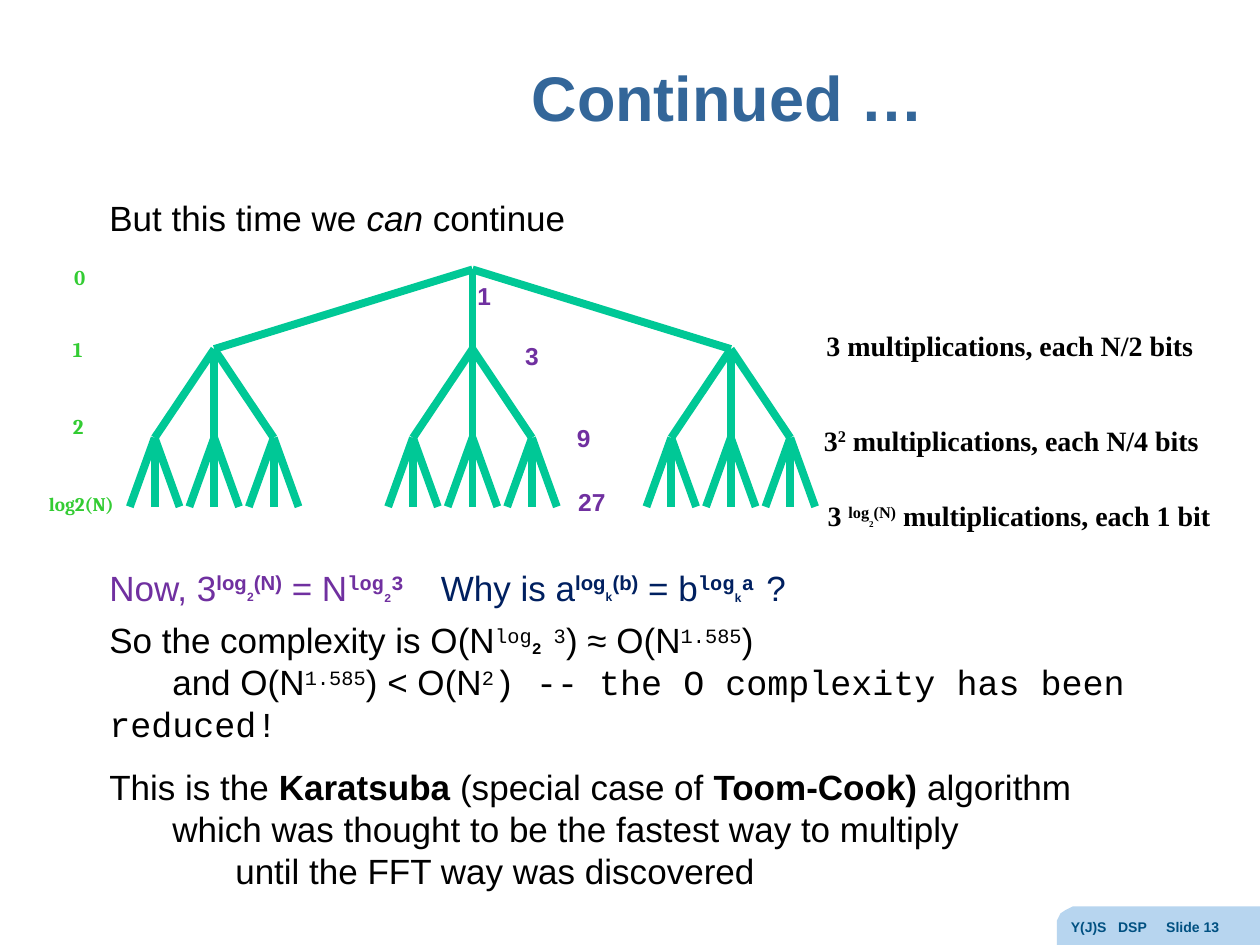
"""Build the slide on the recursion tree and complexity of Karatsuba multiplication."""
from lxml import etree
from pptx import Presentation
from pptx.dml.color import RGBColor
from pptx.enum.shapes import MSO_CONNECTOR
from pptx.enum.text import MSO_ANCHOR, PP_ALIGN
from pptx.oxml.ns import qn
from pptx.util import Pt

STRAIGHT = MSO_CONNECTOR.STRAIGHT
TOP, MIDDLE = MSO_ANCHOR.TOP, MSO_ANCHOR.MIDDLE
LEFT, CENTER = PP_ALIGN.LEFT, PP_ALIGN.CENTER

BLACK = RGBColor(0, 0, 0)
BLUE = RGBColor(0x33, 0x66, 0x99)
NAVY = RGBColor(0x00, 0x20, 0x60)
PURPLE = RGBColor(0x70, 0x30, 0xA0)
GREEN = RGBColor(0x33, 0xCC, 0x33)
TEAL = RGBColor(0x00, 0xC8, 0x96)
PALE_BLUE = RGBColor(0xB7, 0xD5, 0xEF)
FOOTER_BLUE = RGBColor(0x00, 0x50, 0x81)

SANS, MONO, SERIF, LABEL = "Arial", "Courier New", "Times New Roman", "Cambria"

PLAIN = {}
BOLD = {"bold": True}
ITALIC = {"italic": True}
CODE = {"name": MONO}
RAISED = {"baseline": 30}
RAISED_BOLD = {"baseline": 30, "bold": True}
RAISED_CODE = {"baseline": 30, "name": MONO}
RAISED_CODE_BOLD = {**RAISED_CODE, "bold": True}
LOW_BOLD = {"baseline": -2, "bold": True, "size": Pt(12)}
LOW_CODE_BOLD = {"baseline": -4, "bold": True, "size": Pt(12), "name": MONO}
LOW_CODE_LARGE = {**LOW_CODE_BOLD, "size": Pt(16)}
LOW_SMALL = {"baseline": -2, "size": Pt(9)}


def power_identity(base, index, exponent, result, swapped):
    return [(base, PLAIN), ("log", RAISED_BOLD), (index, LOW_BOLD),
            (exponent, RAISED_BOLD), (result, PLAIN), ("log", RAISED_CODE_BOLD),
            (index, LOW_CODE_BOLD), (swapped, RAISED_CODE_BOLD)]


def tinted(spans, color):
    return [(text, {**style, "color": color}) for text, style in spans]


IDENTITIES = (
    tinted(power_identity("Now, 3", "2", "(N)", " = N", "3"), PURPLE)
    + [("\t", PLAIN)]
    + tinted(power_identity("Why is a", "k", "(b)", " = b", "a ") + [("?", PLAIN)], NAVY)
)

TREE_GAP = 187
INDENTS = (36, 72)
BODY = [
    (0, INDENTS, [("But this time we ", PLAIN), ("can", ITALIC), (" continue", PLAIN)]),
    (TREE_GAP, (189.4,), IDENTITIES),
    (6, INDENTS, [("So the complexity is O(N", PLAIN), ("log", RAISED_CODE),
                  ("2", LOW_CODE_LARGE), (" 3", RAISED_CODE), (") ≈ O(N", PLAIN),
                  ("1.585", RAISED_CODE), (")", PLAIN)]),
    (0, INDENTS, [("\tand O(N", PLAIN), ("1.585", RAISED_CODE), (") < O(N", PLAIN),
                  ("2", RAISED_CODE),
                  (") -- the O complexity has been reduced!", CODE)]),
    (12, INDENTS, [("This is the ", PLAIN), ("Karatsuba", BOLD),
                   (" (special case of ", PLAIN), ("Toom-Cook) ", BOLD),
                   ("algorithm", PLAIN)]),
    (0, INDENTS, [("\twhich was thought to be the fastest way to multiply", PLAIN)]),
    (0, INDENTS, [("\t\tuntil the FFT way was discovered", PLAIN)]),
]

LEVELS = [("0", 35.3, 147.6, 12), ("1", 34.6, 188.6, 12),
          ("2", 34.6, 232.6, 12), ("log2(N)", 20.9, 277.9, 11)]
COUNTS = [("1", 265.7, 157), ("3", 293, 191.5), ("9", 322.6, 238.3), ("27", 323.3, 275)]
COSTS = [
    (465.1, 184.3, [("3 multiplications, each N/2 bits", PLAIN)]),
    (463.7, 238.3, [("3", PLAIN), ("2", RAISED),
                    (" multiplications, each N/4 bits", PLAIN)]),
    (465.8, 281.5, [("3 ", PLAIN), ("log", RAISED), ("2", LOW_SMALL),
                    ("(N)", RAISED), (" multiplications, each 1 bit", PLAIN)]),
]

ROOT = (270, 154)
BRANCHES = [(147.6, 199.5), (34, 250.2), (14.2, 289.6)]
FOOTER_OUTLINE = [(720, 517.7), (720, 540), (604, 540), (604, 525.6), (606.2, 522),
                  (609.1, 519.8), (612.7, 518.4), (615.6, 517.7)]


def style_font(font, name=None, size=None, bold=None, italic=None, color=None):
    if name:
        font.name = name
    if size:
        font.size = size
    if bold is not None:
        font.bold = bold
    if italic is not None:
        font.italic = italic
    if color is not None:
        font.color.rgb = color


def add_span(paragraph, text, style):
    style = dict(style)
    baseline = style.pop("baseline", None)
    span = paragraph.add_run()
    span.text = text
    style_font(span.font, **style)
    if baseline is not None:
        span.font._element.set("baseline", str(baseline * 1000))


def set_tabs(paragraph, stops):
    properties = paragraph._p.get_or_add_pPr()
    tabs = etree.Element(qn("a:tabLst"))
    for stop in stops:
        etree.SubElement(tabs, qn("a:tab"), pos=str(int(Pt(stop))), algn="l")
    properties.find(qn("a:defRPr")).addprevious(tabs)


def add_text(page, bounds, paragraphs, name, size, color, bold=False,
             align=LEFT, anchor=TOP, spacing=None):
    box = page.shapes.add_textbox(*map(Pt, bounds))
    frame = box.text_frame
    frame.word_wrap = True
    frame.vertical_anchor = anchor
    for number, (before, stops, spans) in enumerate(paragraphs):
        paragraph = frame.add_paragraph() if number else frame.paragraphs[0]
        paragraph.alignment = align
        if spacing:
            paragraph.line_spacing = spacing
        paragraph.space_before = Pt(before)
        style_font(paragraph.font, name, Pt(size), bold, color=color)
        if stops:
            set_tabs(paragraph, stops)
        for text, style in spans:
            add_span(paragraph, text, style)


def add_line(page, text, bounds, *font, **layout):
    add_text(page, bounds, [(0, (), [(text, PLAIN)])], *font, **layout)


def add_branches(page, x, y, levels):
    if not levels:
        return
    (spread, child_y), *deeper = levels
    for side in (-1, 1, 0):
        child_x = x + side * spread
        branch = page.shapes.add_connector(STRAIGHT, Pt(x), Pt(y), Pt(child_x), Pt(child_y))
        branch.line.color.rgb = TEAL
        branch.line.width = Pt(4.5)
        etree.SubElement(branch._element.spPr, qn("a:effectLst"))
        add_branches(page, child_x, child_y, deeper)


def add_footer(page):
    start, *rest = FOOTER_OUTLINE
    builder = page.shapes.build_freeform(*start, scale=Pt(1))
    builder.add_line_segments(rest, close=True)
    corner = builder.convert_to_shape()
    corner.shadow.inherit = False
    corner.fill.solid()
    corner.fill.fore_color.rgb = PALE_BLUE
    corner.line.fill.background()
    add_text(page, (604.8, 521.3, 115.2, 18.7),
             [(0, (27, 54.5), [("Y(J)S\tDSP\tSlide 13", PLAIN)])],
             SANS, 8, FOOTER_BLUE, True)


def main():
    deck = Presentation()
    deck.slide_width, deck.slide_height = Pt(720), Pt(540)
    page = deck.slides.add_slide(deck.slide_layouts[6])
    add_footer(page)
    add_line(page, "Continued …", (152.6, 13, 526.3, 90), SANS, 36, BLUE, True,
             align=CENTER, anchor=MIDDLE, spacing=0.9)
    add_text(page, (55.4, 109, 645.1, 387.4), BODY, SANS, 20, BLACK)
    add_branches(page, *ROOT, BRANCHES)
    for left, top, spans in COSTS:
        add_text(page, (left, top, 240, 26.6), [(0, (), spans)], SERIF, 16, BLACK, True)
    for text, left, top, size in LEVELS:
        add_line(page, text, (left, top, 74, 21.6), LABEL, size, GREEN, True)
    for text, left, top in COUNTS:
        add_line(page, text, (left, top, 36.7, 24.5), SANS, 14, PURPLE, True)
    deck.save("out.pptx")


if __name__ == "__main__":
    main()
